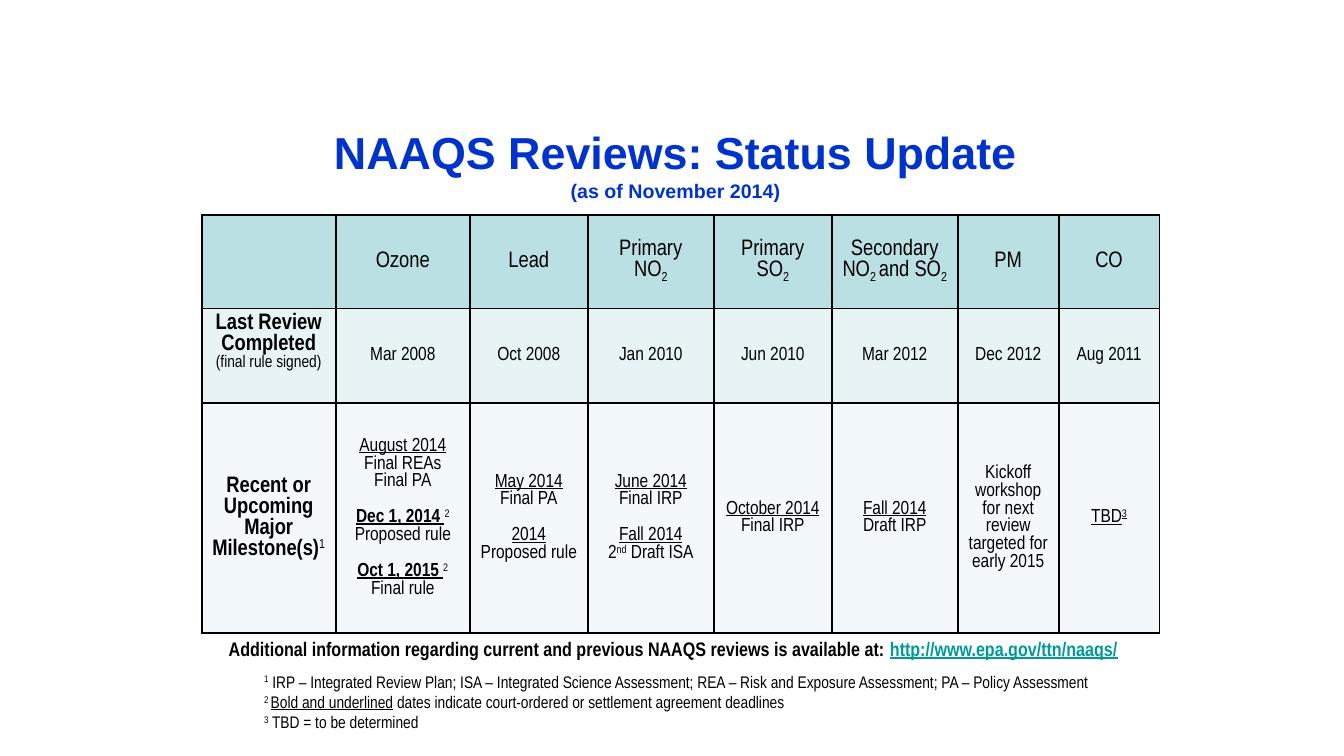
from dataclasses import dataclass

from lxml import etree
from pptx import Presentation
from pptx.dml.color import RGBColor
from pptx.enum.text import MSO_ANCHOR, PP_ALIGN
from pptx.oxml.ns import qn
from pptx.util import Pt

PX = 9144  # 100 px to the inch
LEFT, CENTER = PP_ALIGN.LEFT, PP_ALIGN.CENTER
TOP, MIDDLE = MSO_ANCHOR.TOP, MSO_ANCHOR.MIDDLE


@dataclass(frozen=True)
class Theme:
    sans: str = "Arial"
    narrow: str = "Arial Narrow"
    blue: str = "0033CC"
    black: str = "000000"
    teal: str = "009999"
    bands: tuple = ("BBE0E3", "E7F3F4", "F3F9FA")
    title: float = 32
    date: float = 14
    head: float = 16
    body: float = 13.5
    note: float = 12
    link: float = 14
    line: float = 1.5
    gap: float = 13


THEME = Theme()

# A paragraph is a string or a list of (text, marks) runs:
# b bold, u underlined, ^ raised, _ lowered, s small, t teal.
# A cell is a list of blocks, and a block is a list of paragraphs.
HEADS = [
    [],
    [["Ozone"]],
    [["Lead"]],
    [["Primary", [("NO", ""), ("2", "_")]]],
    [["Primary", [("SO", ""), ("2", "_")]]],
    [[[("Secondary NO", ""), ("2 ", "_"), ("and SO", ""), ("2", "_")]]],
    [["PM"]],
    [["CO"]],
]
DATES = ["Mar 2008", "Oct 2008", "Jan 2010", "Jun 2010", "Mar 2012",
         "Dec 2012", "Aug 2011"]
LAST = [[[("Last Review Completed ", "b"), ("(final rule signed)", "s")]]]
NEXT = [[[("Recent or Upcoming Major Milestone(s)", "b"), ("1", "^")]]]
STEPS = [
    [[[("August 2014", "u")], "Final REAs", "Final PA"],
     [[("Dec 1, 2014 ", "bu"), ("2", "^")], "Proposed rule"],
     [[("Oct 1, 2015 ", "bu"), ("2", "^")], "Final rule"]],
    [[[("May 2014", "u")], "Final PA"],
     [[("2014", "u")], "Proposed rule"]],
    [[[("June 2014", "u")], "Final IRP"],
     [[("Fall 2014", "u")], [("2", ""), ("nd", "^"), (" Draft ISA", "")]]],
    [[[("October 2014", "u")], "Final IRP"]],
    [[[("Fall 2014", "u")], "Draft IRP"]],
    [["Kickoff workshop for next review targeted for early 2015"]],
    [[[("TBD", "u"), ("3", "u^")]]],
]
ROWS = [HEADS, [LAST] + [[[date]] for date in DATES], [NEXT] + STEPS]
WIDTHS = [133, 133, 117, 125, 117, 125, 100, 100]
HEIGHTS = [93, 94, 228]
NOTES = [
    [("1", "^"), (" IRP – Integrated Review Plan; ISA – Integrated Science "
                  "Assessment; REA – Risk and Exposure Assessment; "
                  "PA – Policy Assessment", "")],
    [("2 ", "^"), ("Bold and underlined", "u"),
     (" dates indicate court-ordered or settlement agreement deadlines", "")],
    [("3", "^"), (" TBD = to be determined", "")],
]
MORE = [("Additional information regarding current and previous NAAQS "
         "reviews is available at: ", "b"),
        ("http://www.epa.gov/ttn/naaqs/", "but"), (" ", "b")]


def style(font, size, color=THEME.black, name=THEME.narrow):
    font.name = name
    font.size = Pt(size)
    font.color.rgb = RGBColor.from_string(color)


def write(para, text, size, align):
    """Fill a paragraph from a string or a list of marked runs."""
    para.alignment = align
    runs = [(text, "")] if isinstance(text, str) else text
    for words, marks in runs:
        run = para.add_run()
        run.text = words
        style(run.font, THEME.note if "s" in marks else size,
              THEME.teal if "t" in marks else THEME.black)
        run.font.bold = "b" in marks
        run.font.underline = "u" in marks
        for mark, shift in (("^", "30000"), ("_", "-25000")):
            if mark in marks:
                run.font._element.set("baseline", shift)


def add_box(slide, box, anchor=TOP):
    frame = slide.shapes.add_textbox(*(n * PX for n in box)).text_frame
    frame.word_wrap = True
    frame.vertical_anchor = anchor
    return frame


def add_title(slide, box):
    frame = add_box(slide, box, MIDDLE)
    frame.text = "NAAQS Reviews: Status Update\v(as of November 2014)"
    para = frame.paragraphs[0]
    para.alignment = CENTER
    for run, size in zip(para.runs, (THEME.title, THEME.date)):
        style(run.font, size, THEME.blue, THEME.sans)
        run.font.bold = True


def add_lines(slide, box, lines, size, align):
    frame = add_box(slide, box)
    for i, line in enumerate(lines):
        para = frame.add_paragraph() if i else frame.paragraphs[0]
        write(para, line, size, align)


def rule_cell(cell):
    """Draw the four borders of a cell."""
    props = cell._tc.get_or_add_tcPr()
    for side in ("lnL", "lnR", "lnT", "lnB"):
        line = etree.SubElement(props, qn("a:" + side),
                                w=str(Pt(THEME.line)))
        fill = etree.SubElement(line, qn("a:solidFill"))
        etree.SubElement(fill, qn("a:srgbClr"), val=THEME.black)


def fill_cell(cell, blocks, size, color, anchor):
    rule_cell(cell)
    cell.fill.solid()
    cell.fill.fore_color.rgb = RGBColor.from_string(color)
    cell.vertical_anchor = anchor
    frame = cell.text_frame
    para = None
    for block in blocks:
        for i, text in enumerate(block):
            first = para is None
            para = frame.paragraphs[0] if first else frame.add_paragraph()
            if i == 0 and not first:
                para.space_before = Pt(THEME.gap)
            write(para, text, size, CENTER)


def add_grid(slide, left, top):
    table = slide.shapes.add_table(
        len(ROWS), len(WIDTHS), left * PX, top * PX,
        sum(WIDTHS) * PX, sum(HEIGHTS) * PX).table
    table.first_row = table.horz_banding = False
    for col, width in zip(table.columns, WIDTHS):
        col.width = width * PX
    for r, cells in enumerate(ROWS):
        table.rows[r].height = HEIGHTS[r] * PX
        for c, blocks in enumerate(cells):
            size = THEME.head if r == 0 or c == 0 else THEME.body
            anchor = TOP if blocks is LAST else MIDDLE
            fill_cell(table.cell(r, c), blocks, size, THEME.bands[r], anchor)


def main():
    deck = Presentation()
    deck.slide_width, deck.slide_height = 1333 * PX, 750 * PX
    slide = deck.slides.add_slide(deck.slide_layouts[6])
    add_title(slide, (195, 108, 950, 108))
    add_grid(slide, 200, 213)
    add_lines(slide, (252, 661, 875, 118), NOTES, THEME.note, LEFT)
    add_lines(slide, (170, 627, 1000, 34), [MORE], THEME.link, CENTER)
    deck.save("out.pptx")


if __name__ == "__main__":
    main()
